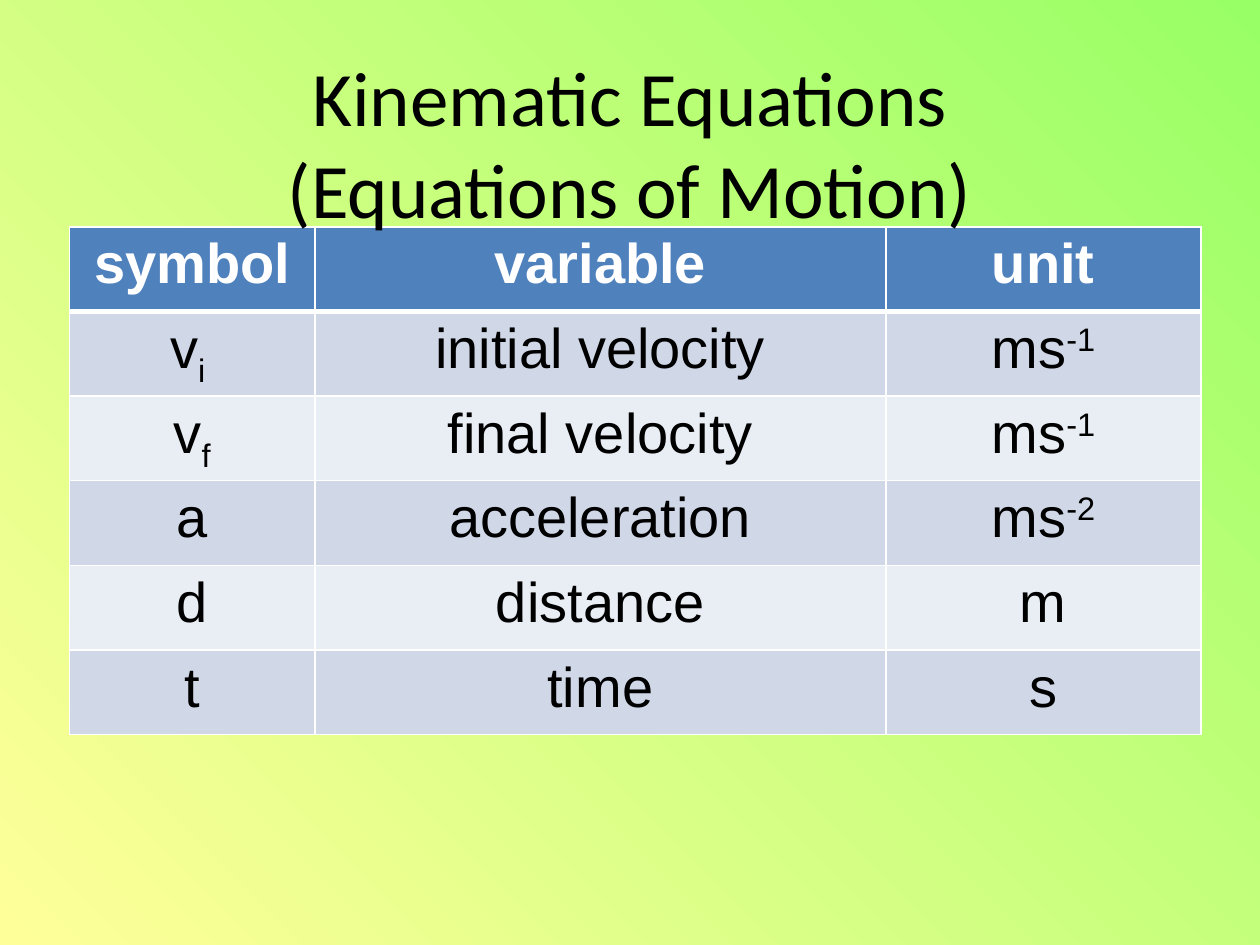
from lxml import etree
from pptx import Presentation, util as u
from pptx.dml.color import RGBColor
from pptx.enum import text
from pptx.oxml.ns import qn

WIDTH, HEIGHT = 10, 7.5


def color(hex_string):
    return RGBColor.from_string(hex_string)


def add_run(paragraph, content, font="Arial", size=32, hex_string="000000", bold=False, baseline=0):
    """Add formatted text; baseline is a percentage, below zero for subscript."""
    run = paragraph.add_run()
    run.text = content
    run.font.name = font
    run.font.size = u.Pt(size)
    run.font.bold = bold
    run.font.color.rgb = color(hex_string)
    if baseline:
        run.font._element.set("baseline", str(baseline * 1000))


class SlideBuilder:
    HEADER, BANDS, BORDER = "4F81BD", ("D0D8E8", "E9EDF4"), "FFFFFF"

    def __init__(self, presentation):
        self.slide = presentation.slides.add_slide(presentation.slide_layouts[6])

    def box(self, left, top, width, height):
        """Turn shares of the slide's size into lengths."""
        return [u.Inches(round(share * side, 2)) for share, side in
                ((left, WIDTH), (top, HEIGHT), (width, WIDTH), (height, HEIGHT))]

    def background(self, start, end, angle):
        fill = self.slide.background.fill
        fill.gradient()
        fill.gradient_angle = angle
        for stop, position, hex_string in zip(fill.gradient_stops, (0, 1), (start, end)):
            stop.position = position
            stop.color.rgb = color(hex_string)

    def title(self, lines, *shares):
        frame = self.slide.shapes.add_textbox(*self.box(*shares)).text_frame
        frame.word_wrap = True
        frame.margin_top = u.Inches(0.09)
        paragraph = frame.paragraphs[0]
        paragraph.alignment = text.PP_ALIGN.CENTER
        for index, line in enumerate(lines):
            if index:
                paragraph.add_line_break()
            add_run(paragraph, line, font="Calibri", size=44)

    def borders(self, cell, widths):
        properties = cell._tc.get_or_add_tcPr()
        for index, (side, width) in enumerate(widths.items()):
            line = etree.Element(qn(f"a:ln{side}"), w=str(u.Pt(width)))
            fill = etree.SubElement(line, qn("a:solidFill"))
            etree.SubElement(fill, qn("a:srgbClr"), val=self.BORDER)
            properties.insert(index, line)

    def table(self, rows, column_shares, *shares):
        table = self.slide.shapes.add_table(len(rows), len(rows[0]), *self.box(*shares)).table
        for column, share in zip(table.columns, column_shares):
            column.width = u.Inches(share * WIDTH)
        for r, row in enumerate(rows):
            header = r == 0
            for c, runs in enumerate(row):
                cell = table.cell(r, c)
                cell.fill.solid()
                cell.fill.fore_color.rgb = color(self.HEADER if header else self.BANDS[(r - 1) % 2])
                self.borders(cell, {"L": 1, "R": 1, "T": 3 if r == 1 else 1, "B": 3 if header else 1})
                paragraph = cell.text_frame.paragraphs[0]
                paragraph.alignment = text.PP_ALIGN.CENTER
                for content, baseline in runs:
                    add_run(paragraph, content, bold=header, baseline=baseline,
                            hex_string="FFFFFF" if header else "000000")


def plain(content):
    return [(content, 0)]


def subscript(base, index):
    return [(base, 0), (index, -25)]


def power(base, exponent):
    return [(base, 0), (exponent, 30)]


def main():
    presentation = Presentation()
    presentation.slide_width, presentation.slide_height = u.Inches(WIDTH), u.Inches(HEIGHT)
    builder = SlideBuilder(presentation)
    builder.background("FFFF99", "99FF66", 45)

    # Symbols, what they stand for and their units
    rows = [
        [plain("symbol"), plain("variable"), plain("unit")],
        [subscript("v", "i "), plain("initial velocity"), power("ms", "-1")],
        [subscript("v", "f"), plain("final velocity"), power("ms", "-1")],
        [plain("a"), plain("acceleration"), power("ms", "-2")],
        [plain("d"), plain("distance"), plain("m")],
        [plain("t"), plain("time"), plain("s")],
    ]
    builder.table(rows, (0.195, 0.453, 0.25), 0.055, 0.24, 0.898, 0.5373)

    # Title
    builder.title(["Kinematic Equations", "(Equations of Motion)"], 0.05, 0.04, 0.9, 1 / 6)
    presentation.save("out.pptx")


if __name__ == "__main__":
    main()
